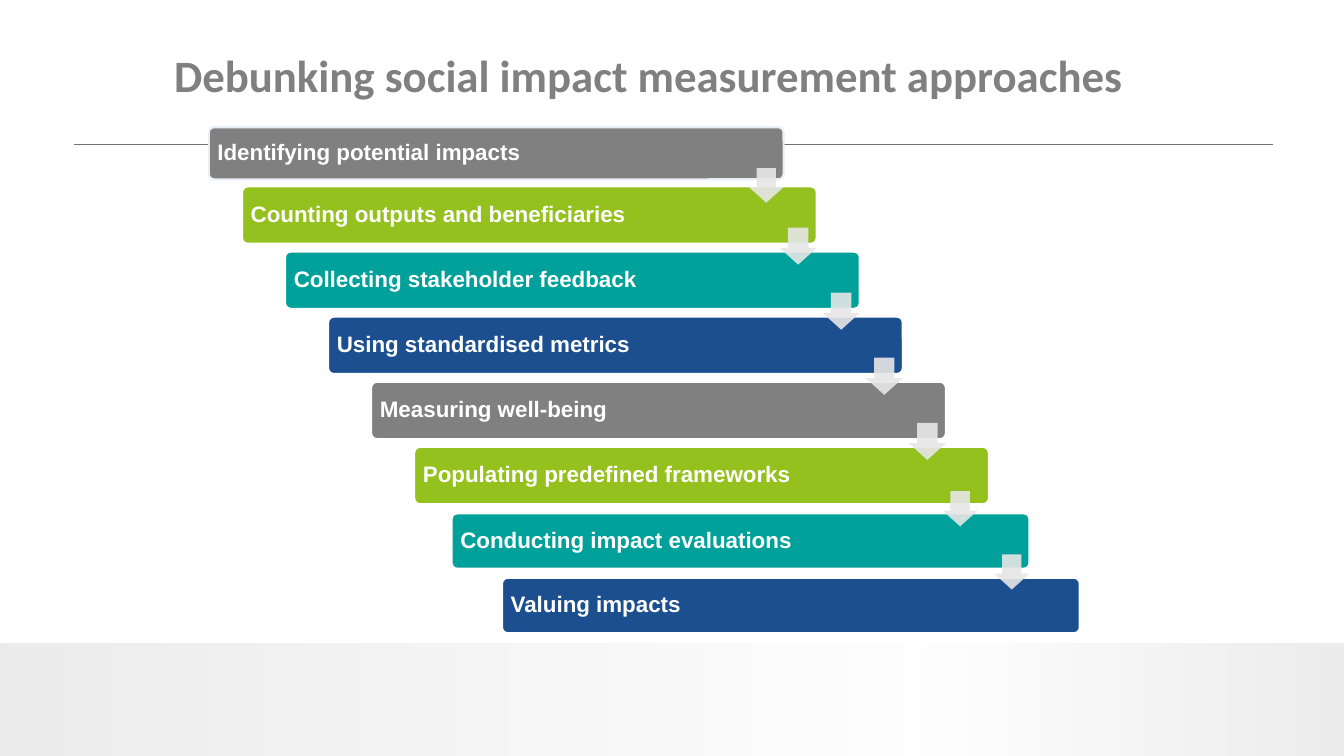
from dataclasses import dataclass

from lxml.etree import SubElement
from pptx import Presentation
from pptx.dml.color import RGBColor
from pptx.enum.shapes import MSO_CONNECTOR as Connector, MSO_SHAPE as Preset
from pptx.enum.text import MSO_ANCHOR as Anchor, MSO_AUTO_SIZE as AutoSize, PP_ALIGN as Align
from pptx.oxml.ns import qn
from pptx.shapes.autoshape import Shape
from pptx.slide import Slide
from pptx.util import Inches, Pt

WIDTH, HEIGHT = Inches(13.33), Inches(7.5)

# One column and one row make one stair of the cascade
COLUMN, ROW = Inches(0.427), Inches(0.646)
STAIRS_LEFT, STAIRS_TOP = Inches(2.4), Inches(1.85)

WHITE, GREY, GREEN, TEAL, BLUE = "FFFFFF", "808080", "95C11F", "00A19A", "1B4F8F"
PALE_BLUE, ARROW_GREY, BAND_GREY, RULE_GREY = "E9EFF7", "E6E6E6", "D9D9D9", "727272"


@dataclass(frozen=True)
class Step:
    """A bar and the arrow below it, measured in columns and rows."""
    label: str
    color: str
    column: float
    row: float
    columns: float = 13.35
    rows: float = 0.88
    outline: str = WHITE
    arrow_rows: float = 0.57
    arrow_drop: float = 0.63
    arrow_inset: float = 0


@dataclass(frozen=True)
class Band:
    """A footer band, measured in shares of the slide width."""
    left: float
    width: float
    rotation: float


STEPS = [
    Step("Identifying potential impacts", GREY, -0.77, -0.91, rows=0.8,
         outline=PALE_BLUE, arrow_rows=0.53),
    Step("Counting outputs and beneficiaries", GREEN, 0, 0),
    Step("Collecting stakeholder feedback", TEAL, 1, 1),
    Step("Using standardised metrics", BLUE, 2, 2),
    Step("Measuring well-being", GREY, 3, 3),
    Step("Populating predefined frameworks", GREEN, 4, 4,
         arrow_rows=0.54, arrow_drop=0.68, arrow_inset=0.26),
    Step("Conducting impact evaluations", TEAL, 4.87, 5.02, 13.42, 0.85, arrow_rows=0.54),
    Step("Valuing impacts", BLUE, 6.04, 6.01, 13.42, 0.85),
]
BANDS = [Band(0.686, 0.314, 0), Band(0, 0.713, 180)]


def rgb(color: str) -> RGBColor:
    return RGBColor.from_string(color)


def set_alpha(color_element, percent: int) -> None:
    SubElement(color_element, qn("a:alpha")).set("val", str(percent * 1000))


def add_plain_shape(slide: Slide, preset: Preset, left: float, top: float,
                    width: float, height: float) -> Shape:
    shape = slide.shapes.add_shape(preset, int(left), int(top), int(width), int(height))
    shape.shadow.inherit = False
    shape.line.fill.background()
    return shape


def add_title(slide: Slide, text: str) -> None:
    title = slide.shapes.title
    title.left, title.top = int(WIDTH * 0.122), int(HEIGHT * 0.05)
    title.width, title.height = int(WIDTH * 0.878), int(HEIGHT * 0.096)
    frame = title.text_frame
    frame.text = text
    frame.auto_size = AutoSize.NONE
    frame.vertical_anchor = Anchor.MIDDLE
    para = frame.paragraphs[0]
    para.alignment = Align.LEFT
    para.font.name, para.font.size, para.font.bold = "Calibri", Pt(32), True
    para.font.color.rgb = rgb(GREY)


def add_rule(slide: Slide) -> None:
    level = int(HEIGHT * 0.191)
    rule = slide.shapes.add_connector(
        Connector.STRAIGHT, int(WIDTH * 0.055), level, int(WIDTH * 0.947), level)
    rule.line.color.rgb = rgb(RULE_GREY)
    rule.line.width = Pt(0.5)
    SubElement(rule._element.spPr, qn("a:effectLst"))


def add_band(slide: Slide, band: Band) -> None:
    """Draw a footer band that fades from clear to half transparent grey."""
    shape = add_plain_shape(slide, Preset.RECTANGLE, WIDTH * band.left, HEIGHT * 0.851,
                            WIDTH * band.width, HEIGHT * 0.149)
    shape.rotation = band.rotation
    shape.fill.gradient()
    shape.fill.gradient_angle = 0
    for stop in shape.fill.gradient_stops:
        stop.color.rgb = rgb(BAND_GREY)
    for color_element, percent in zip(shape._element.spPr.iter(qn("a:srgbClr")), (0, 50)):
        set_alpha(color_element, percent)


def add_bar(slide: Slide, step: Step) -> None:
    bar = add_plain_shape(slide, Preset.ROUNDED_RECTANGLE,
                          STAIRS_LEFT + step.column * COLUMN, STAIRS_TOP + step.row * ROW,
                          step.columns * COLUMN, step.rows * ROW)
    bar.adjustments[0] = 0.1
    bar.fill.solid()
    bar.fill.fore_color.rgb = rgb(step.color)
    bar.line.color.rgb = rgb(step.outline)
    bar.line.width = Pt(1.5)
    frame = bar.text_frame
    frame.text = step.label
    frame.word_wrap = True
    frame.vertical_anchor = Anchor.MIDDLE
    frame.margin_left = frame.margin_right = Inches(0.07)
    frame.margin_top = frame.margin_bottom = Inches(0.07)
    para = frame.paragraphs[0]
    para.alignment = Align.LEFT
    para.line_spacing = 0.9
    para.font.name, para.font.size, para.font.bold = "Arial", Pt(16), True
    para.font.color.rgb = rgb(WHITE)


def add_arrow(slide: Slide, step: Step) -> None:
    """Draw the arrow that leads from the right end of a bar to the next one."""
    size = step.arrow_rows * ROW
    right = STAIRS_LEFT + (step.column + step.columns - step.arrow_inset) * COLUMN
    top = STAIRS_TOP + (step.row + step.arrow_drop) * ROW
    arrow = add_plain_shape(slide, Preset.DOWN_ARROW, right - size, top, size, size)
    arrow.adjustments[0], arrow.adjustments[1] = 0.55, 0.45
    arrow.fill.solid()
    arrow.fill.fore_color.rgb = rgb(ARROW_GREY)
    set_alpha(next(arrow._element.spPr.iter(qn("a:srgbClr"))), 90)


def main() -> None:
    deck = Presentation()
    deck.slide_width, deck.slide_height = WIDTH, HEIGHT
    page = deck.slides.add_slide(deck.slide_layouts.get_by_name("Title Only"))
    add_title(page, "Debunking social impact measurement approaches")
    add_rule(page)
    for band in BANDS:
        add_band(page, band)
    for step in STEPS:
        add_bar(page, step)
    for step in STEPS[:-1]:
        add_arrow(page, step)
    deck.save("out.pptx")


if __name__ == "__main__":
    main()
